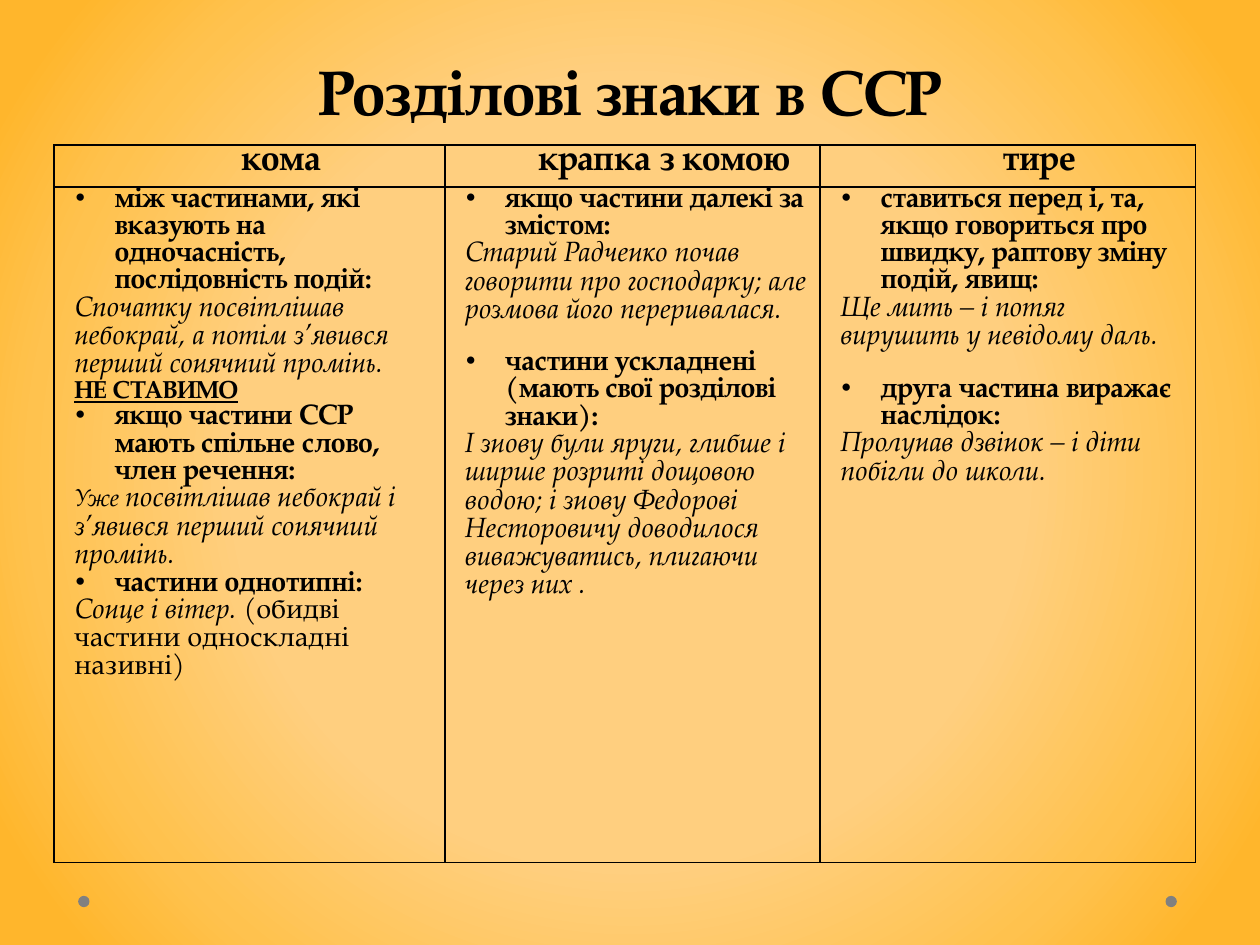
from dataclasses import dataclass

from lxml import etree
from pptx import Presentation
from pptx.dml.color import RGBColor
from pptx.enum.shapes import MSO_SHAPE as Shape
from pptx.enum.text import MSO_ANCHOR as Anchor, PP_ALIGN as Align
from pptx.oxml.ns import qn
from pptx.util import Inches, Pt


@dataclass(frozen=True)
class Theme:
    """Colours, font and type sizes of the slide."""
    font: str = "TeX Gyre Pagella"
    ink: str = "000000"
    dot: str = "808080"
    glow: tuple = ((50, "FFCF7F"), (76, "FFC24E"), (92, "FFB62C"))
    title: int = 36
    heading: int = 20
    body: int = 16
    small: int = 14
    gap: int = 14
    rule: int = 1


THEME = Theme()
BOLD = {"bold": True}
ITALIC = {"italic": True}
SMALL = {"size": THEME.small}
RULE = {"bullet": True}
GAP_RULE = {"bullet": True, "before": THEME.gap}

COLUMNS = [
    ("кома", 3.1, [
        (RULE, [("між частинами, які вказують на одночасність, послідовність подій:", BOLD)]),
        ({}, [("Спочатку посвітлішав небокрай, а потім з’явився перший сонячний промінь.", ITALIC)]),
        ({}, [("НЕ СТАВИМО", {**BOLD, **SMALL, "underline": True})]),
        (RULE, [("якщо частини ССР мають спільне слово, член речення:", BOLD)]),
        ({}, [("Уже ", {**ITALIC, **SMALL}),
              ("посвітлішав небокрай і з’явився перший сонячний промінь.", ITALIC)]),
        (RULE, [("частини однотипні:", BOLD)]),
        ({}, [("Сонце і вітер. ", ITALIC), ("(обидві частини односкладні називні)", {})]),
    ]),
    ("крапка з комою", 2.98, [
        (RULE, [("якщо частини далекі за змістом:", BOLD)]),
        ({}, [("Старий Радченко почав говорити про господарку; але розмова його переривалася.", ITALIC)]),
        (GAP_RULE, [("частини ускладнені (мають свої розділові знаки):", BOLD)]),
        ({}, [("І знову були яруги, глибше і ширше розриті дощовою водою; і знову Федорові "
               "Несторовичу доводилося виважуватись, плигаючи через них .", ITALIC)]),
    ]),
    ("тире", 2.98, [
        (RULE, [("ставиться перед і, та, якщо говориться про швидку, раптову зміну подій, явищ:", BOLD)]),
        ({}, [("Ще мить – і потяг вирушить у невідому даль.", ITALIC)]),
        (GAP_RULE, [("друга частина виражає наслідок:", BOLD)]),
        ({}, [("Пролунав дзвінок – і діти побігли до школи.", ITALIC)]),
    ]),
]


def add_text(paragraph, text, size=THEME.body, bold=False, italic=False, underline=False):
    """Append a formatted run to a paragraph."""
    run = paragraph.add_run()
    run.text = text
    font = run.font
    font.name, font.size = THEME.font, Pt(size)
    font.bold, font.italic, font.underline = bold, italic, underline
    font.color.rgb = RGBColor.from_string(THEME.ink)


def indent(paragraph, left, first=0, bullet=False, before=0):
    """Set the indents, the space above and the bullet of a paragraph."""
    paragraph.space_before = Pt(before)
    props = paragraph._p.get_or_add_pPr()
    props.set("marL", str(Inches(left)))
    props.set("indent", str(Inches(first)))
    if bullet:
        etree.SubElement(props, qn("a:buChar")).set("char", "•")


def add_colour(parent, colour):
    """Append an RGB colour element to a fill or gradient stop."""
    etree.SubElement(parent, qn("a:srgbClr")).set("val", colour)


def paint_background(slide):
    """Fill the background with a round glow from the centre."""
    slide.background.fill.gradient()
    gradient = slide.background._cSld.find(".//" + qn("a:gradFill"))
    for part in list(gradient):
        gradient.remove(part)
    stops = etree.SubElement(gradient, qn("a:gsLst"))
    for position, colour in THEME.glow:
        stop = etree.SubElement(stops, qn("a:gs"), pos=str(position * 1000))
        add_colour(stop, colour)
    circle = etree.SubElement(gradient, qn("a:path"))
    circle.set("path", "circle")
    etree.SubElement(circle, qn("a:fillToRect"), l="50000", t="50000", r="50000", b="50000")


def add_title(slide, left, top, width, height):
    """Place the centred title at the bottom of its box."""
    frame = slide.shapes.add_textbox(left, top, width, height).text_frame
    frame.word_wrap = True
    frame.vertical_anchor = Anchor.BOTTOM
    title = frame.paragraphs[0]
    title.alignment, title.line_spacing = Align.CENTER, Pt(58)
    add_text(title, "Розділові знаки в ССР", size=THEME.title, bold=True)


def style_cell(cell):
    """Clear the fill, set the margins and rule all four sides of a cell."""
    cell.margin_left = cell.margin_right = Inches(0.07)
    cell.margin_top = cell.margin_bottom = 0
    cell.fill.background()
    props = cell._tc.get_or_add_tcPr()
    for place, side in enumerate(("lnL", "lnR", "lnT", "lnB")):
        line = etree.Element(qn("a:" + side), w=str(Pt(THEME.rule)))
        add_colour(etree.SubElement(line, qn("a:solidFill")), THEME.ink)
        props.insert(place, line)


def add_rules_table(slide, left, top, width, height):
    """Place the table with one column for each punctuation mark."""
    table = slide.shapes.add_table(2, len(COLUMNS), left, top, width, height).table
    table.first_row = table.horz_banding = False
    table.rows[0].height = Inches(0.31)
    table.rows[1].height = height - Inches(0.31)
    for index, (mark, column_width, rules) in enumerate(COLUMNS):
        table.columns[index].width = Inches(column_width)
        heading, body = table.cell(0, index), table.cell(1, index)
        style_cell(heading)
        style_cell(body)
        label = heading.text_frame.paragraphs[0]
        label.alignment = Align.CENTER
        indent(label, 0.5)
        add_text(label, mark, size=THEME.heading, bold=True)
        frame = body.text_frame
        for number, (layout, runs) in enumerate(rules):
            paragraph = frame.add_paragraph() if number else frame.paragraphs[0]
            left_indent, first = (0.41, -0.31) if layout else (0.09, 0)
            indent(paragraph, left_indent, first, **layout)
            for text, style in runs:
                add_text(paragraph, text, **style)


def add_footer_dots(slide, left, top, width, size):
    """Place a dot at each end of the footer."""
    for x in (left, left + width - size):
        dot = slide.shapes.add_shape(Shape.OVAL, x, top, size, size)
        dot.shadow.inherit = False
        dot.fill.solid()
        dot.fill.fore_color.rgb = RGBColor.from_string(THEME.dot)
        dot.line.fill.background()


def main():
    """Build and save the slide."""
    deck = Presentation()
    deck.slide_width, deck.slide_height = Inches(10), Inches(7.5)
    slide = deck.slides.add_slide(deck.slide_layouts[6])
    paint_background(slide)
    add_footer_dots(slide, Inches(0.62), Inches(7.11), Inches(8.72), Inches(0.09))
    add_title(slide, Inches(0.5), Inches(0), Inches(9), Inches(1.07))
    add_rules_table(slide, Inches(0.43), Inches(1.15), Inches(9.06), Inches(5.67))
    deck.save("out.pptx")


if __name__ == "__main__":
    main()
